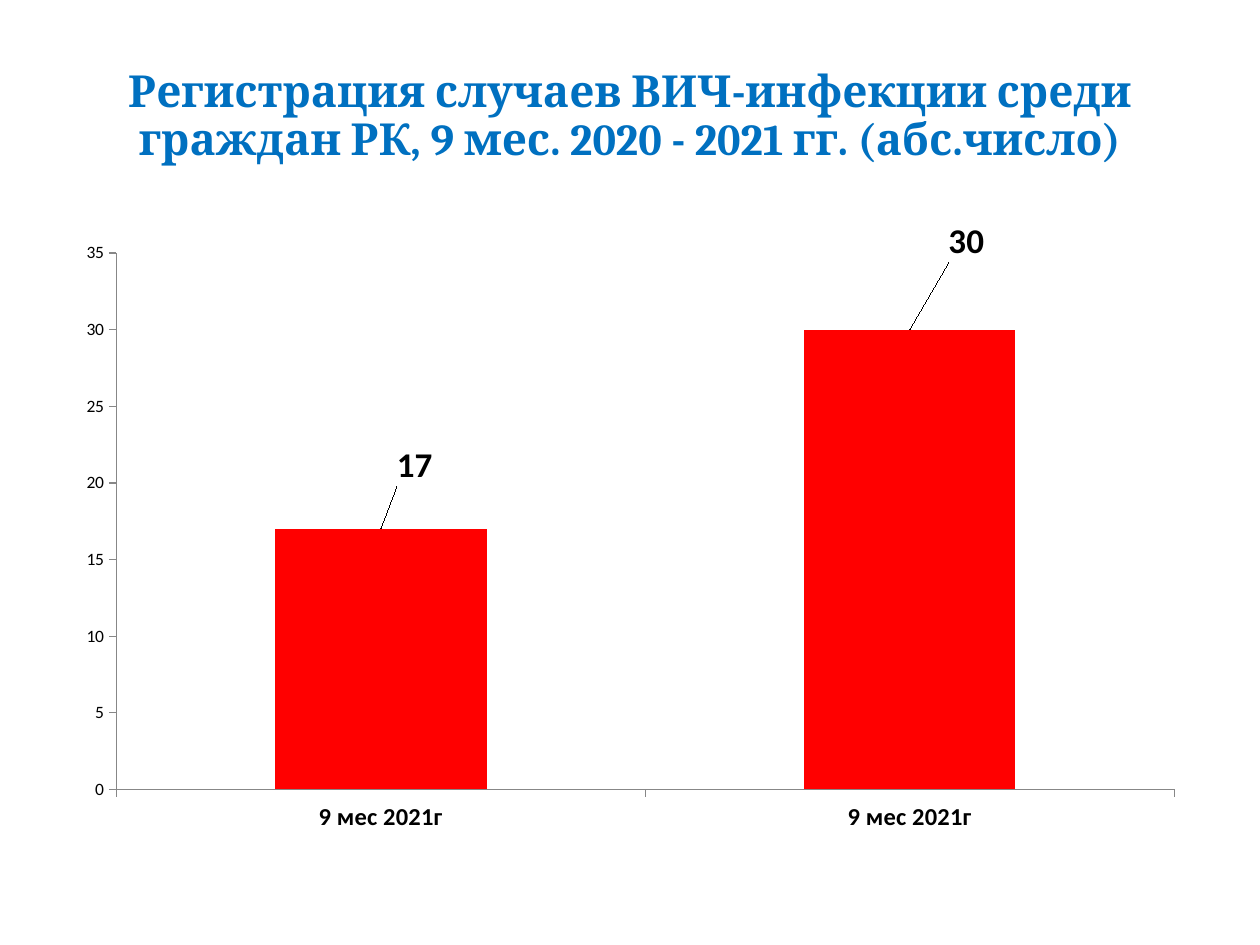
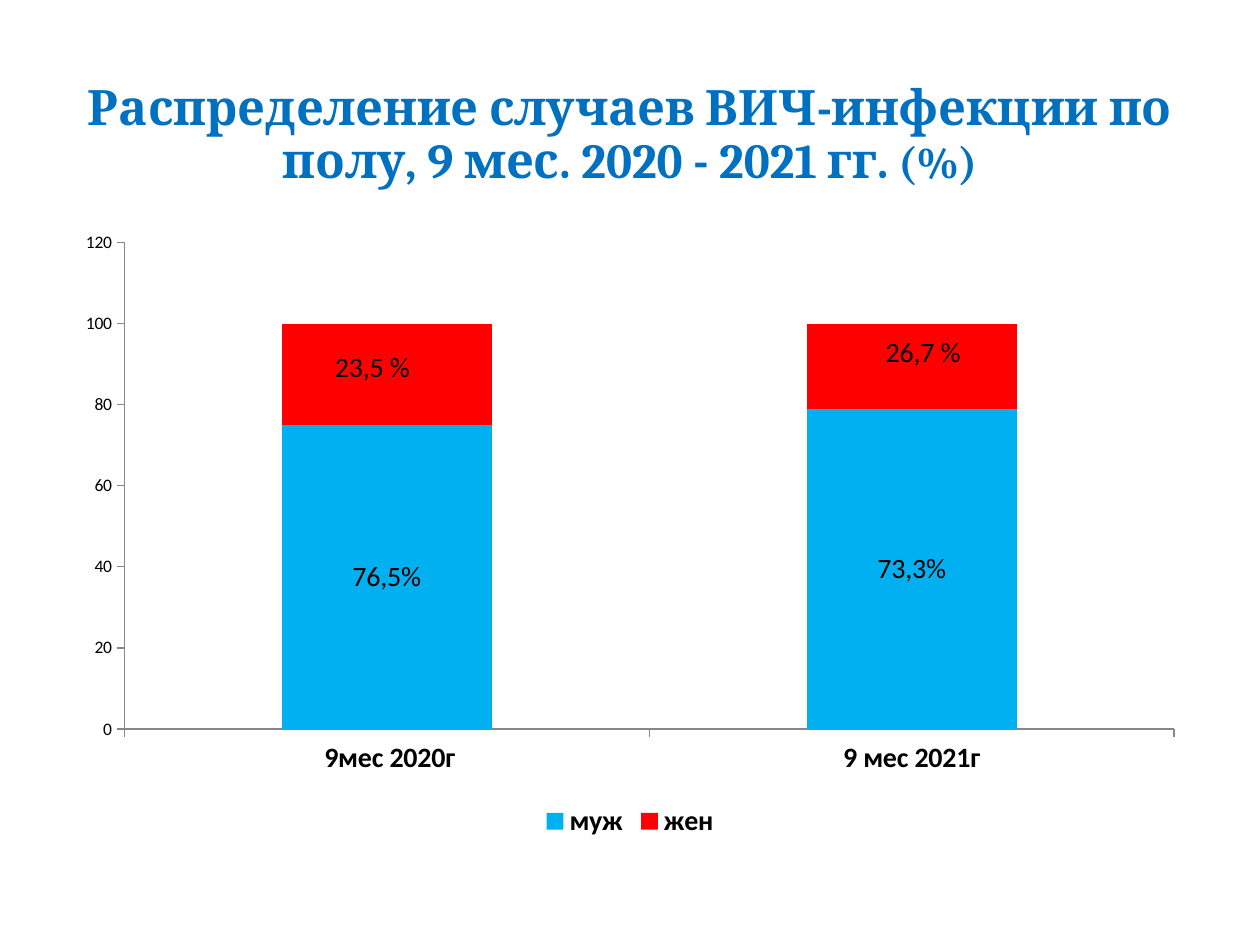
"""Build two slides of column charts on registered HIV cases."""
import pptx
import pptx.chart.data
import pptx.dml.color
import pptx.enum.chart
import pptx.enum.text
import pptx.oxml
import pptx.oxml.ns
import pptx.util

PX = 914400 / 126
COLORS = {"title": "0070C0", "red": "FF0000", "blue": "00B0F0", "text": "000000", "axis": "878787"}
XL = pptx.enum.chart

SLIDES = [
    {
        "title": [("Регистрация случаев ВИЧ-инфекции среди граждан РК, 9 мес. 2020 - 2021 гг. (абс.число)", 25.2)],
        "top": 38, "height": 158,
        "type": XL.XL_CHART_TYPE.COLUMN_CLUSTERED,
        "cats": ["9 мес 2021г", "9 мес 2021г"], "cat_size": 14, "label_size": 20,
        "plot": (0.047, 0.044, 0.933, 0.868),
        "scale": (35, 5),
        "series": [("Series 1", [17, 30], "red", [None, None], [(0.03, -0.06), (0.05, -0.1)])],
    },
    {
        "title": [("Распределение случаев ВИЧ-инфекции по полу, 9 мес. 2020 - 2021 гг.", 27.9), (" (%)", 25.2)],
        "top": 76, "height": 120,
        "type": XL.XL_CHART_TYPE.COLUMN_STACKED,
        "cats": [" 9мес 2020г", "9 мес 2021г"], "cat_size": 16, "label_size": 16,
        "plot": (0.054, 0.036, 0.926, 0.78),
        "scale": (120, 20),
        "series": [
            ("муж", [75, 79], "blue", ["76,5%", "73,3%"], [None, None]),
            ("жен", [25, 21], "red", ["23,5 % ", "26,7 %"], [(-0.01, -0.01), (0.01, -0.02)]),
        ],
    },
]


def add_run(p, text, size, font="Calibri", color="text", bold=False):
    r = p.add_run()
    r.text = text
    r.font.size = pptx.util.Pt(size)
    r.font.name = font
    r.font.bold = bold
    r.font.color.rgb = pptx.dml.color.RGBColor.from_string(COLORS[color])


def manual_layout(x, y, w=None, h=None):
    tags = [("x", x), ("y", y)]
    if w:
        tags = [("layoutTarget", "inner"), ("xMode", "edge"), ("yMode", "edge")] + tags + [("w", w), ("h", h)]
    body = "".join(f'<c:{tag} val="{val}"/>' for tag, val in tags)
    return pptx.oxml.parse_xml(
        f'<c:layout {pptx.oxml.ns.nsdecls("c")}><c:manualLayout>{body}</c:manualLayout></c:layout>')


prs = pptx.Presentation()
prs.slide_width = pptx.util.Inches(10)
prs.slide_height = pptx.util.Inches(7.5)

for spec_ in SLIDES:
    s = prs.slides.add_slide(prs.slide_layouts[5])
    sp = s.shapes.title
    sp.left, sp.top, sp.width, sp.height = [int(v * PX) for v in (63, spec_["top"], 1134, spec_["height"])]
    tf = sp.text_frame
    tf.auto_size = pptx.enum.text.MSO_AUTO_SIZE.NONE
    tf.vertical_anchor = pptx.enum.text.MSO_ANCHOR.MIDDLE
    p = tf.paragraphs[0]
    p.alignment = pptx.enum.text.PP_ALIGN.CENTER
    p.line_spacing = 0.9
    for text, size in spec_["title"]:
        add_run(p, text, size, font="Cambria", color="title", bold=True)

    data = pptx.chart.data.CategoryChartData()
    data.categories = spec_["cats"]
    for name, values, *_ in spec_["series"]:
        data.add_series(name, values)
    box = [int(v * PX) for v in (63, 220, 1134, 624)]
    chart = s.shapes.add_chart(spec_["type"], *box, data).chart
    chart.has_title = False
    chart.font.size = pptx.util.Pt(10)
    chart.font.name = "Calibri"
    chart.font.color.rgb = pptx.dml.color.RGBColor.from_string(COLORS["text"])

    stacked = len(spec_["series"]) > 1
    chart.has_legend = stacked
    if stacked:
        chart.legend.position = XL.XL_LEGEND_POSITION.BOTTOM
        chart.legend.include_in_layout = False
        chart.legend.font.size = pptx.util.Pt(16)
        chart.legend.font.bold = True

    for axis in (chart.category_axis, chart.value_axis):
        axis.has_major_gridlines = False
        axis.major_tick_mark = XL.XL_TICK_MARK.OUTSIDE
        axis.format.line.color.rgb = pptx.dml.color.RGBColor.from_string(COLORS["axis"])
        axis.format.line.width = pptx.util.Pt(0.75)
    chart.category_axis.tick_labels.font.size = pptx.util.Pt(spec_["cat_size"])
    chart.category_axis.tick_labels.font.bold = True
    chart.value_axis.minimum_scale = 0
    chart.value_axis.maximum_scale, chart.value_axis.major_unit = spec_["scale"]

    plot = chart.plots[0]
    plot.gap_width = 150
    plot.overlap = 100 if stacked else 0
    plot.vary_by_categories = False
    area = chart._chartSpace.chart.plotArea
    for old in area.findall(pptx.oxml.ns.qn("c:layout")):
        area.remove(old)
    area.insert(0, manual_layout(*spec_["plot"]))

    for series, (name, values, color, labels, offsets) in zip(plot.series, spec_["series"]):
        series.format.fill.solid()
        series.format.fill.fore_color.rgb = pptx.dml.color.RGBColor.from_string(COLORS[color])
        series.data_labels.show_value = True
        series.data_labels.font.size = pptx.util.Pt(spec_["label_size"])
        series.data_labels.font.bold = True
        for i, (text, offset) in enumerate(zip(labels, offsets)):
            label = series.points[i].data_label
            if text:
                add_run(label.text_frame.paragraphs[0], text, spec_["label_size"])
                label.position = XL.XL_LABEL_POSITION.CENTER
            else:
                label.font.size = pptx.util.Pt(spec_["label_size"])
                label.font.bold = True
                label.position = XL.XL_LABEL_POSITION.OUTSIDE_END
            if offset:
                d_lbl = series._element.findall(".//" + pptx.oxml.ns.qn("c:dLbl"))[i]
                d_lbl.insert(1, manual_layout(*offset))

prs.save("out.pptx")
